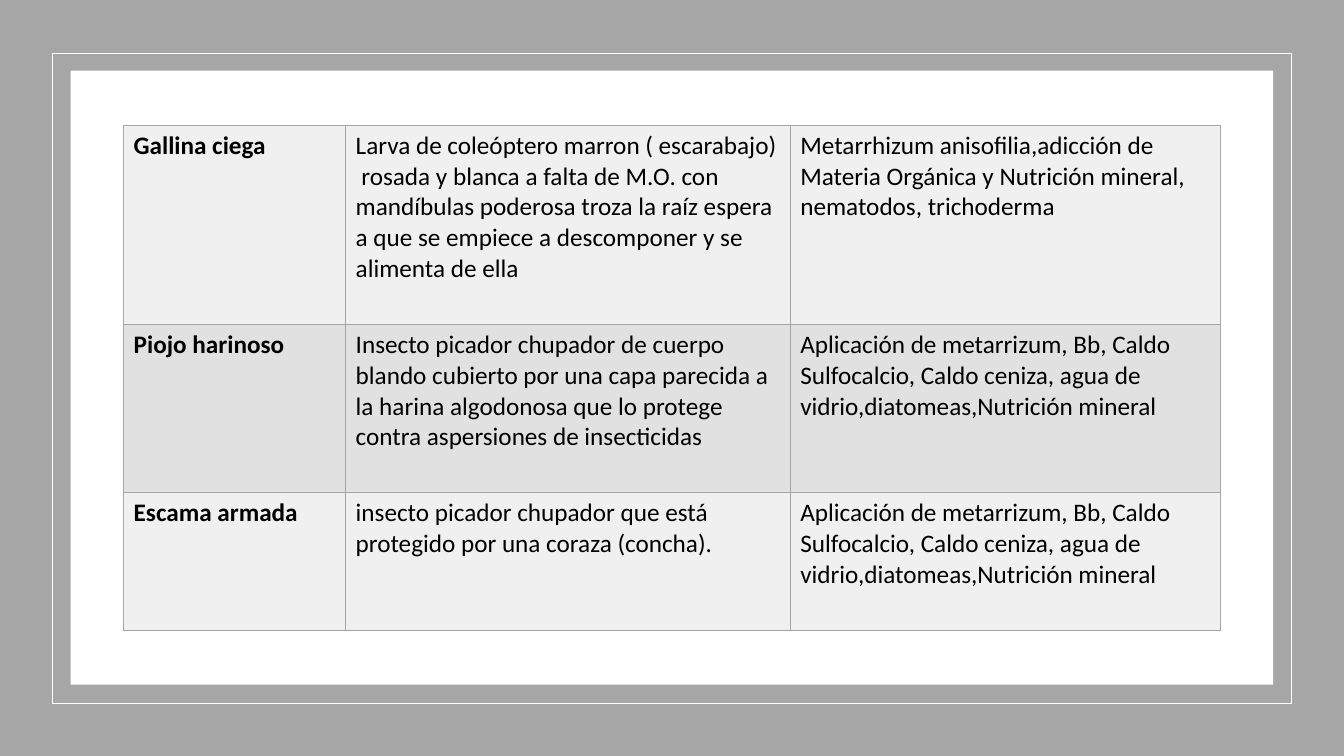
from dataclasses import dataclass
from typing import Optional

from lxml import etree
from pptx import Presentation
from pptx import util as u
from pptx.dml import color
from pptx.enum import shapes, text
from pptx.oxml import ns

HUES = {
    "back": "A6A6A6",
    "white": "FFFFFF",
    "ink": "000000",
    "rule": "A5A5A5",
    "light": "F0F0F0",
    "dark": "E1E1E1",
}


@dataclass
class Panel:
    left: float
    top: float
    width: float
    height: float
    fill: Optional[str] = None
    line: Optional[str] = None


@dataclass
class Pest:
    name: str
    traits: str
    cure: str
    height: float


CURE = ("Aplicación de metarrizum, Bb, Caldo Sulfocalcio, Caldo ceniza, "
        "agua de vidrio,diatomeas,Nutrición mineral")

PANELS = [
    Panel(0, 0, 960, 540, fill="back"),
    Panel(37.5, 38, 885, 464.4, line="white"),
    Panel(50.5, 50.5, 859, 438.5, fill="white"),
]

PESTS = [
    Pest("Gallina ciega",
         "Larva de coleóptero marron ( escarabajo)  rosada y blanca a falta de "
         "M.O. con mandíbulas poderosa troza la raíz espera a que se empiece "
         "a descomponer y se alimenta de ella",
         "Metarrhizum anisofilia,adicción de Materia Orgánica y Nutrición "
         "mineral, nematodos, trichoderma", 142.3),
    Pest("Piojo harinoso",
         "Insecto picador chupador de cuerpo blando cubierto por una capa "
         "parecida a la harina algodonosa que lo protege contra aspersiones "
         "de insecticidas", CURE, 120),
    Pest("Escama armada",
         "insecto picador chupador que está protegido por una coraza (concha).",
         CURE, 98.5),
]

WIDTHS = [158.6, 317.6, 307.2]


def hue(key: str) -> color.RGBColor:
    return color.RGBColor.from_string(HUES[key])


def draw_panel(slide, panel: Panel) -> None:
    shape = slide.shapes.add_shape(
        shapes.MSO_SHAPE.RECTANGLE, u.Pt(panel.left), u.Pt(panel.top),
        u.Pt(panel.width), u.Pt(panel.height))
    shape.shadow.inherit = False
    if panel.fill:
        shape.fill.solid()
        shape.fill.fore_color.rgb = hue(panel.fill)
    else:
        shape.fill.background()
    if panel.line:
        shape.line.color.rgb = hue(panel.line)
        shape.line.width = u.Pt(1)
    else:
        shape.line.fill.background()


def add_rules(cell) -> None:
    props = cell._tc.get_or_add_tcPr()
    for spot, side in enumerate(("lnL", "lnR", "lnT", "lnB")):
        line = etree.Element(ns.qn(f"a:{side}"), w=str(u.Pt(1)))
        fill = etree.SubElement(line, ns.qn("a:solidFill"))
        etree.SubElement(fill, ns.qn("a:srgbClr"), val=HUES["rule"])
        props.insert(spot, line)


def fill_cell(cell, words: str, shade: str, bold: bool) -> None:
    cell.fill.solid()
    cell.fill.fore_color.rgb = hue(shade)
    cell.margin_left = cell.margin_right = u.Pt(7.2)
    cell.margin_top = cell.margin_bottom = u.Pt(3.6)
    cell.vertical_anchor = text.MSO_ANCHOR.TOP
    run = cell.text_frame.paragraphs[0].add_run()
    run.text = words
    run.font.name = "Calibri"
    run.font.size = u.Pt(18)
    run.font.bold = bold
    run.font.color.rgb = hue("ink")
    add_rules(cell)


def draw_table(slide, pests: list[Pest]) -> None:
    height = sum(pest.height for pest in pests)
    table = slide.shapes.add_table(
        len(pests), len(WIDTHS), u.Pt(88.3), u.Pt(89.5),
        u.Pt(sum(WIDTHS)), u.Pt(height)).table
    table.first_row = False
    table.horz_banding = False
    for column, width in zip(table.columns, WIDTHS):
        column.width = u.Pt(width)
    for index, pest in enumerate(pests):
        table.rows[index].height = u.Pt(pest.height)
        shade = "dark" if index % 2 else "light"
        for place, words in enumerate((pest.name, pest.traits, pest.cure)):
            fill_cell(table.cell(index, place), words, shade, place == 0)


def main() -> None:
    deck = Presentation()
    deck.slide_width, deck.slide_height = u.Pt(960), u.Pt(540)
    slide = deck.slides.add_slide(deck.slide_layouts[6])
    for panel in PANELS:
        draw_panel(slide, panel)
    draw_table(slide, PESTS)
    deck.save("out.pptx")


if __name__ == "__main__":
    main()
